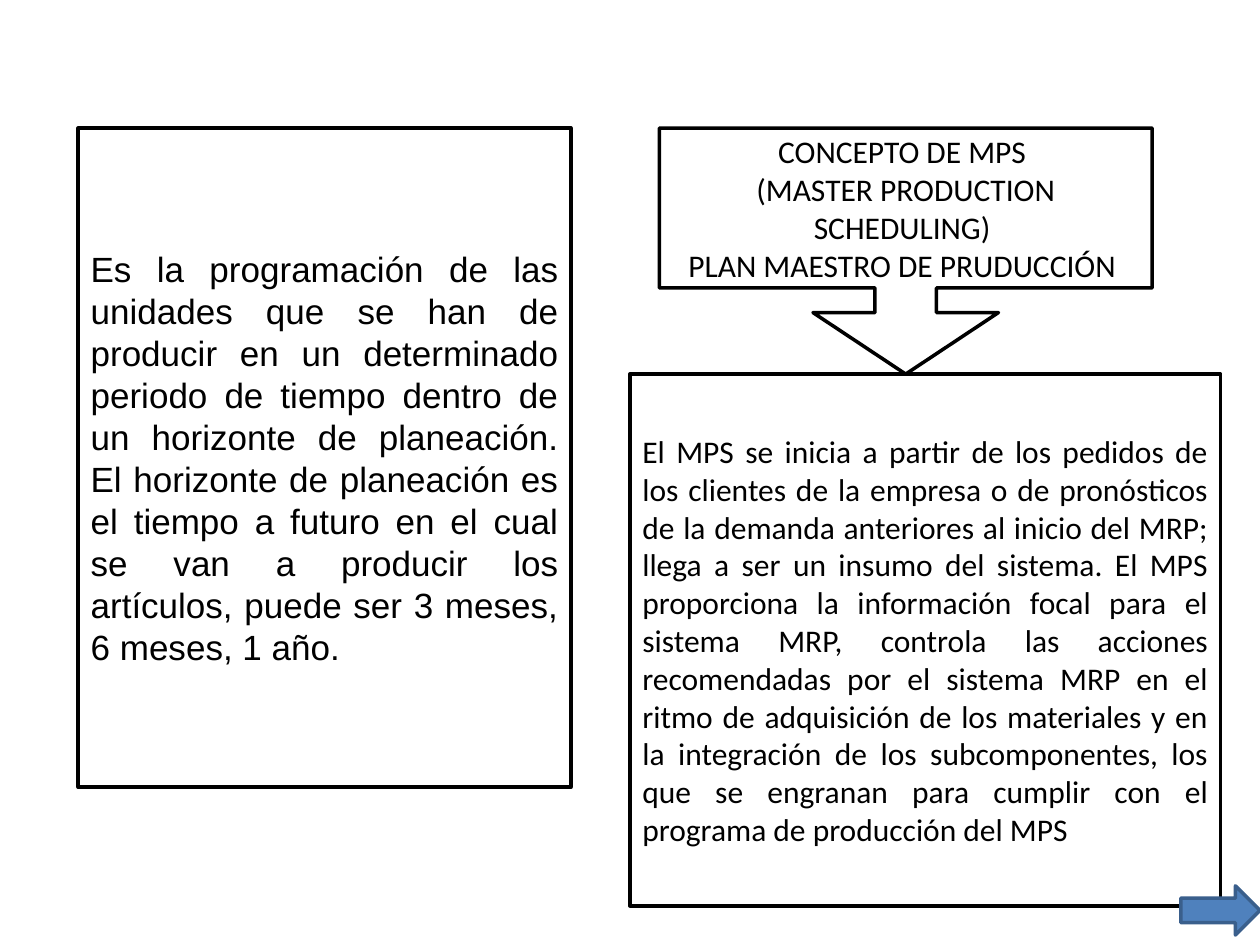
import pptx
import pptx.util
import pptx.dml.color
import pptx.enum.shapes
import pptx.enum.text

Pt = pptx.util.Pt
SHAPE = pptx.enum.shapes.MSO_SHAPE
ALIGN = pptx.enum.text.PP_ALIGN
COLORS = {"white": "FFFFFF", "black": "000000", "blue": "4F81BD", "navy": "3A5F8C"}

DEFINITION = (
    "Es la programación de las unidades que se han de producir en un determinado "
    "periodo de tiempo dentro de un horizonte de planeación. El horizonte de "
    "planeación es el tiempo a futuro en el cual se van a producir los artículos, "
    "puede ser 3 meses, 6 meses, 1 año. "
)
TITLE = "CONCEPTO DE MPS \n(MASTER PRODUCTION SCHEDULING) \nPLAN MAESTRO DE PRUDUCCIÓN "
ORIGIN = (
    "El MPS se inicia a partir de los pedidos de los clientes de la empresa o de "
    "pronósticos de la demanda anteriores al inicio del MRP; llega a ser un insumo "
    "del sistema. El MPS proporciona la información focal para el sistema MRP, "
    "controla las acciones recomendadas por el sistema MRP en el ritmo de "
    "adquisición de los materiales y en la integración de los subcomponentes, los "
    "que se engranan para cumplir con el programa de producción del MPS"
)


def rgb(name):
    return pptx.dml.color.RGBColor.from_string(COLORS[name])


def add_shape(s, kind, box, fill="white", line="black"):
    sp = s.shapes.add_shape(kind, *[Pt(v) for v in box])
    sp.shadow.inherit = False
    sp.fill.solid()
    sp.fill.fore_color.rgb = rgb(fill)
    sp.line.color.rgb = rgb(line)
    sp.line.width = Pt(2)
    return sp


def set_text(sp, text, size, font, align):
    tf = sp.text_frame
    tf.word_wrap = True
    tf.vertical_anchor = pptx.enum.text.MSO_ANCHOR.MIDDLE
    p = tf.paragraphs[0]
    p.text = text
    p.alignment = align
    p.font.size = Pt(size)
    p.font.name = font
    p.font.color.rgb = rgb("black")


def add_panel(s, box, text, size, font):
    sp = add_shape(s, SHAPE.FLOWCHART_PROCESS, box)
    set_text(sp, text, size, font, ALIGN.JUSTIFY)


def add_title_callout(s, box):
    sp = add_shape(s, SHAPE.DOWN_ARROW_CALLOUT, box)
    for i, value in enumerate((0.25, 0.377, 0.25, 0.65)):
        sp.adjustments[i] = value
    set_text(sp, TITLE, 18, "Calibri", ALIGN.CENTER)


def main():
    prs = pptx.Presentation()
    prs.slide_width, prs.slide_height = Pt(720), Pt(540)
    s = prs.slides.add_slide(prs.slide_layouts[6])
    add_panel(s, (44.7, 73.2, 281.5, 376.6), DEFINITION, 20, "Arial")
    add_panel(s, (360, 213.8, 337.5, 303.8), ORIGIN, 18, "Calibri")
    add_title_callout(s, (376.8, 73.2, 281.5, 140.6))
    add_shape(s, SHAPE.RIGHT_ARROW, (674.8, 506.2, 45.2, 28.1), "blue", "navy")
    prs.save("out.pptx")


if __name__ == "__main__":
    main()
